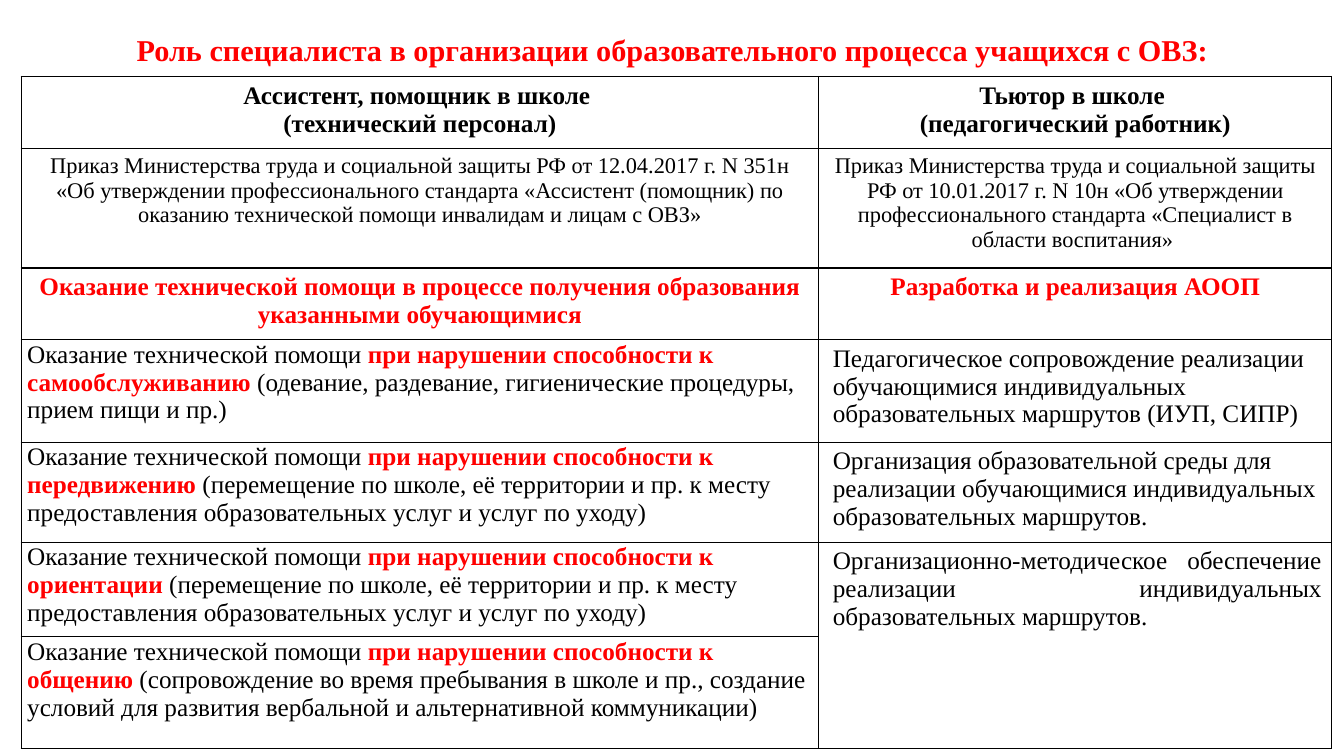
from lxml import etree
from pptx import Presentation
from pptx import util as u
from pptx.dml.color import RGBColor
from pptx.enum import text
from pptx.oxml.ns import qn

RED = RGBColor(0xFF, 0x00, 0x00)
BLACK = RGBColor(0x00, 0x00, 0x00)
WHITE = RGBColor(0xFF, 0xFF, 0xFF)
FONT = "Times New Roman"
CENTER, LEFT, JUSTIFY = text.PP_ALIGN.CENTER, text.PP_ALIGN.LEFT, text.PP_ALIGN.JUSTIFY

# Content
TITLE = "Роль специалиста в организации образовательного процесса учащихся с ОВЗ:"
HEADERS = [
    ["Ассистент, помощник в школе ", "(технический персонал)"],
    ["Тьютор в школе ", "(педагогический работник)"],
]
ORDERS = [
    "Приказ Министерства труда и социальной защиты РФ от 12.04.2017 г. N 351н "
    "«Об утверждении профессионального стандарта «Ассистент (помощник) по "
    "оказанию технической помощи инвалидам и лицам с ОВЗ»",
    "Приказ Министерства труда и социальной защиты РФ от 10.01.2017 г. N 10н "
    "«Об утверждении профессионального стандарта «Специалист в области воспитания» ",
]
ROLES = [
    "Оказание технической помощи в процессе получения образования указанными обучающимися",
    "Разработка и реализация АООП",
]
HELP = "Оказание технической помощи "
IMPAIRMENT = "при нарушении способности к "
MOVING = ("(перемещение по школе, её территории и пр. к месту предоставления "
          "образовательных услуг и услуг по уходу)")
ASSISTANT_DUTIES = [
    ("самообслуживанию ", "(одевание, раздевание, гигиенические процедуры, прием пищи и пр.)"),
    ("передвижению ", MOVING),
    ("ориентации ", MOVING),
    ("общению ", "(сопровождение во время пребывания в школе и пр., создание условий "
                 "для развития вербальной и альтернативной коммуникации)"),
]
TUTOR_DUTIES = [
    ("Педагогическое сопровождение реализации обучающимися индивидуальных "
     "образовательных маршрутов (ИУП, СИПР)", LEFT),
    ("Организация образовательной среды для реализации обучающимися "
     "индивидуальных образовательных маршрутов.", LEFT),
    ("Организационно-методическое обеспечение реализации индивидуальных "
     "образовательных маршрутов.", JUSTIFY),
]

# Grid, in inches
TABLE_LEFT, TABLE_TOP = 0.21, 0.76
COLUMNS = [7.91, 5.09]
ROWS = [0.71, 1.19, 0.71, 1.02, 0.99, 0.94, 1.11]
FIRST_DUTY = 3


def write(paragraph, words, size=18, color=BLACK, bold=False, align=LEFT, indent=0):
    """Append one formatted run to a paragraph."""
    paragraph.alignment = align
    if indent:
        properties = paragraph._p.get_or_add_pPr()
        properties.set("marL", str(u.Inches(indent)))
        properties.set("indent", "0")
    run = paragraph.add_run()
    run.text = words
    run.font.name = FONT
    run.font.size = u.Pt(size)
    run.font.bold = bold
    run.font.color.rgb = color


def add_borders(cell):
    properties = cell._tc.get_or_add_tcPr()
    for position, side in enumerate(("lnL", "lnR", "lnT", "lnB")):
        line = etree.Element(qn("a:" + side), w=str(u.Pt(1)))
        fill = etree.SubElement(line, qn("a:solidFill"))
        etree.SubElement(fill, qn("a:srgbClr"), val=str(BLACK))
        properties.insert(position, line)


presentation = Presentation()
presentation.slide_width = u.Inches(13.33)
presentation.slide_height = u.Inches(7.5)
slide = presentation.slides.add_slide(presentation.slide_layouts[5])

# Title
title = slide.shapes.title
title.left, title.top, title.width, title.height = map(u.Inches, (0.92, 0.15, 11.5, 0.73))
frame = title.text_frame
frame.word_wrap = True
frame.auto_size = text.MSO_AUTO_SIZE.NONE
frame.vertical_anchor = text.MSO_ANCHOR.MIDDLE
frame.paragraphs[0].line_spacing = 0.9
write(frame.paragraphs[0], TITLE, size=21.6, color=RED, bold=True, align=CENTER)

# Table with plain white cells and black borders
table = slide.shapes.add_table(
    len(ROWS), len(COLUMNS), u.Inches(TABLE_LEFT), u.Inches(TABLE_TOP),
    u.Inches(sum(COLUMNS)), u.Inches(sum(ROWS))).table
table.first_row = table.horz_banding = False
for column, width in zip(table.columns, COLUMNS):
    column.width = u.Inches(width)
for row, height in zip(table.rows, ROWS):
    row.height = u.Inches(height)
for cell in table.iter_cells():
    cell.fill.solid()
    cell.fill.fore_color.rgb = WHITE
    add_borders(cell)
table.cell(5, 1).merge(table.cell(6, 1))

# Headings, orders and main roles
for column, (header, order, role) in enumerate(zip(HEADERS, ORDERS, ROLES)):
    header_frame = table.cell(0, column).text_frame
    write(header_frame.paragraphs[0], header[0], bold=True, align=CENTER)
    write(header_frame.add_paragraph(), header[1], bold=True, align=CENTER)
    write(table.cell(1, column).text_frame.paragraphs[0], order, size=16, align=CENTER)
    write(table.cell(2, column).text_frame.paragraphs[0], role,
          color=RED, bold=True, align=CENTER)

# Duties of the assistant
for row, (ability, details) in enumerate(ASSISTANT_DUTIES, FIRST_DUTY):
    cell = table.cell(row, 0)
    cell.margin_left = cell.margin_right = u.Inches(0.02)
    cell.margin_top = cell.margin_bottom = u.Inches(0.01)
    paragraph = cell.text_frame.paragraphs[0]
    write(paragraph, HELP, indent=0.04)
    write(paragraph, IMPAIRMENT + ability, color=RED, bold=True)
    write(paragraph, details)

# Duties of the tutor
for row, (duty, align) in enumerate(TUTOR_DUTIES, FIRST_DUTY):
    write(table.cell(row, 1).text_frame.paragraphs[0], duty, align=align, indent=0.04)

presentation.save("out.pptx")
